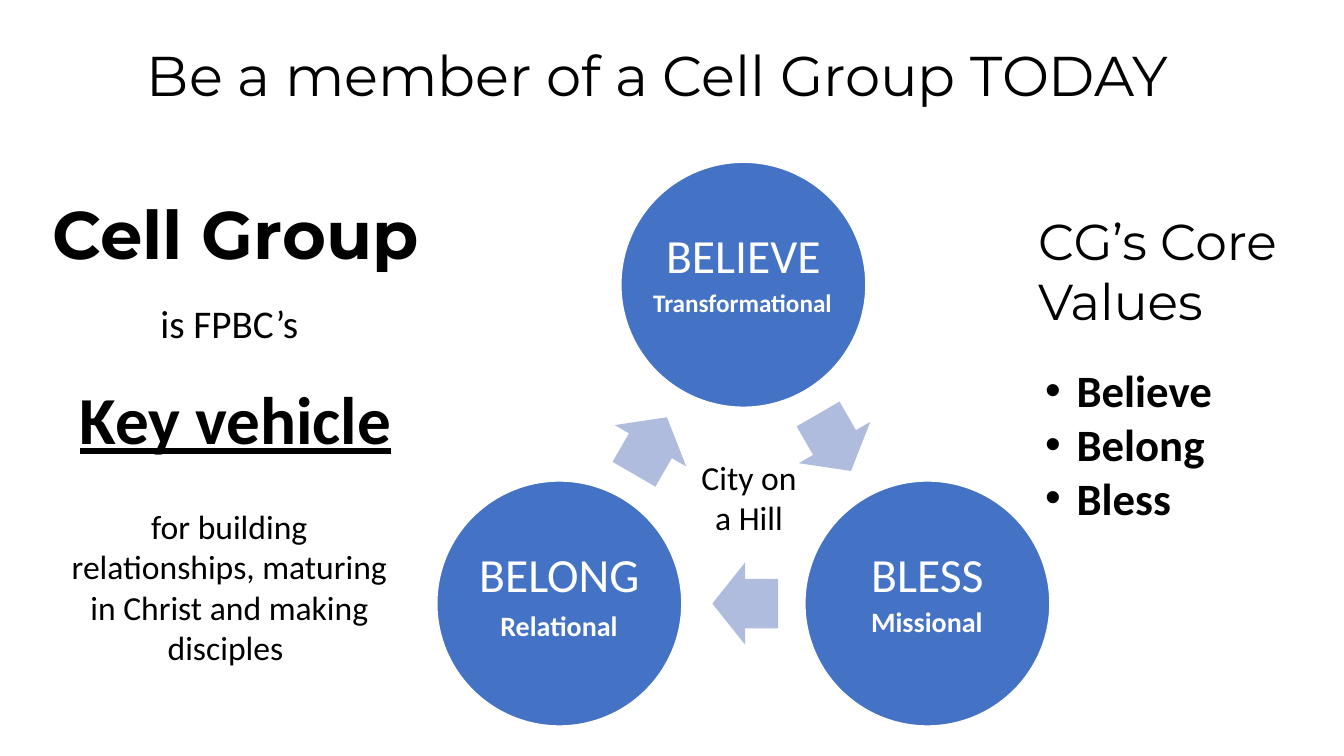
from math import atan2, cos, degrees, radians, sin

from lxml.etree import SubElement
from pptx import Presentation
from pptx.dml.color import RGBColor
from pptx.enum.shapes import MSO_SHAPE as Preset
from pptx.enum.text import MSO_ANCHOR as Anchor, PP_ALIGN as Align
from pptx.oxml.ns import qn
from pptx.util import Pt

COLORS = {"black": "000000", "white": "FFFFFF", "circle": "4472C4", "arrow": "B0BCDE"}

CYCLE_CENTER = (531, 355.2)
CYCLE_RADIUS = 151.8
CIRCLE_SIZE = 175
ARROW_WIDTH, ARROW_HEIGHT = 47, 59
ARROW_POSITION = 0.495  # share of the way from one circle to the next
STAGES = ["BELIEVE", "BLESS", "BELONG"]
CORE_VALUES = ["Believe", "Belong", "Bless"]


def color(name):
    return RGBColor.from_string(COLORS[name])


def add_bullet(paragraph, indent):
    properties = paragraph._p.get_or_add_pPr()
    properties.set("marL", str(Pt(indent)))
    properties.set("indent", str(-Pt(indent)))
    SubElement(properties, qn("a:buFont")).set("typeface", "Arial")
    SubElement(properties, qn("a:buChar")).set("char", "•")


def write_text(frame, lines, size=24, font="Calibri", ink="black", bold=False,
               underline=False, align=Align.CENTER, anchor=Anchor.TOP,
               spacing=None, bullet_indent=None):
    """Fill a text frame with one paragraph per line."""
    frame.word_wrap = True
    frame.vertical_anchor = anchor
    for index, line in enumerate(lines):
        paragraph = frame.add_paragraph() if index else frame.paragraphs[0]
        paragraph.alignment = align
        paragraph.line_spacing = spacing
        if bullet_indent:
            add_bullet(paragraph, bullet_indent)
        run = paragraph.add_run()
        run.text = line
        run.font.name = font
        run.font.size = Pt(size)
        run.font.bold = bold
        run.font.underline = underline
        run.font.color.rgb = color(ink)


def add_text(slide, box, *lines, **text_format):
    textbox = slide.shapes.add_textbox(*map(Pt, box))
    write_text(textbox.text_frame, lines, **text_format)


def add_centered_shape(slide, preset, center, width, height, fill):
    x, y = center
    shape = slide.shapes.add_shape(
        preset, Pt(x - width / 2), Pt(y - height / 2), Pt(width), Pt(height))
    shape.shadow.inherit = False
    shape.fill.solid()
    shape.fill.fore_color.rgb = color(fill)
    shape.line.fill.background()
    return shape


def add_stage(slide, center, name):
    circle = add_centered_shape(slide, Preset.OVAL, center, CIRCLE_SIZE, CIRCLE_SIZE, "circle")
    circle.line.color.rgb = color("white")
    circle.line.width = Pt(1)
    frame = circle.text_frame
    frame.margin_left = frame.margin_right = frame.margin_top = Pt(3.6)
    frame.margin_bottom = Pt(41)  # lifts the name above the stage's description
    write_text(frame, [name], size=34, ink="white", anchor=Anchor.MIDDLE, spacing=0.9)


def add_cycle_arrow(slide, start, end):
    center = [a + (b - a) * ARROW_POSITION for a, b in zip(start, end)]
    arrow = add_centered_shape(
        slide, Preset.RIGHT_ARROW, center, ARROW_WIDTH, ARROW_HEIGHT, "arrow")
    arrow.adjustments[0] = 0.6
    arrow.adjustments[1] = 0.5
    arrow.rotation = degrees(atan2(end[1] - start[1], end[0] - start[0])) % 360


def add_cycle(slide):
    """Draw the stages clockwise from the top, with an arrow to each next stage."""
    angles = [radians(-90 + 360 / len(STAGES) * index) for index in range(len(STAGES))]
    x, y = CYCLE_CENTER
    centers = [(x + CYCLE_RADIUS * cos(angle), y + CYCLE_RADIUS * sin(angle))
               for angle in angles]
    for index, (center, name) in enumerate(zip(centers, STAGES)):
        add_stage(slide, center, name)
        add_cycle_arrow(slide, center, centers[(index + 1) % len(centers)])


def main():
    presentation = Presentation()
    presentation.slide_width, presentation.slide_height = Pt(960), Pt(540)
    slide = presentation.slides.add_slide(presentation.slide_layouts[6])

    add_text(slide, (54.7, 25.2, 830, 55.4), "Be a member of a Cell Group TODAY",
             size=40, font="Montserrat")

    add_text(slide, (20.9, 117.4, 294.5, 104.4), "Cell Group", size=48,
             font="Montserrat", bold=True, anchor=Anchor.MIDDLE, spacing=0.9)
    add_text(slide, (60.5, 210.2, 206.6, 41), "is FPBC’s", size=28)
    add_text(slide, (41.8, 265.7, 252.7, 65.5), "Key vehicle", size=48,
             bold=True, underline=True)
    add_text(slide, (33.1, 357.8, 261.4, 123.8),
             "for building relationships, maturing in Christ and making disciples ")

    add_cycle(slide)
    add_text(slide, (459.4, 201.6, 145.4, 28.8), "Transformational", size=18,
             ink="white", bold=True, align=Align.LEFT)
    add_text(slide, (324, 431.3, 150.5, 31.7), "Relational", size=20, ink="white", bold=True)
    add_text(slide, (586.8, 428.4, 150.5, 31.7), "Missional", size=20, ink="white", bold=True)
    add_text(slide, (491.8, 322.6, 86.4, 65.5), "City on a Hill")

    add_text(slide, (734.4, 146.2, 225.6, 94.3), "CG’s Core Values", size=36,
             font="Montserrat", align=Align.LEFT)
    add_text(slide, (739.4, 255.6, 185.8, 123.8), *CORE_VALUES, size=32, bold=True,
             align=Align.LEFT, bullet_indent=22.5)

    presentation.save("out.pptx")


if __name__ == "__main__":
    main()
